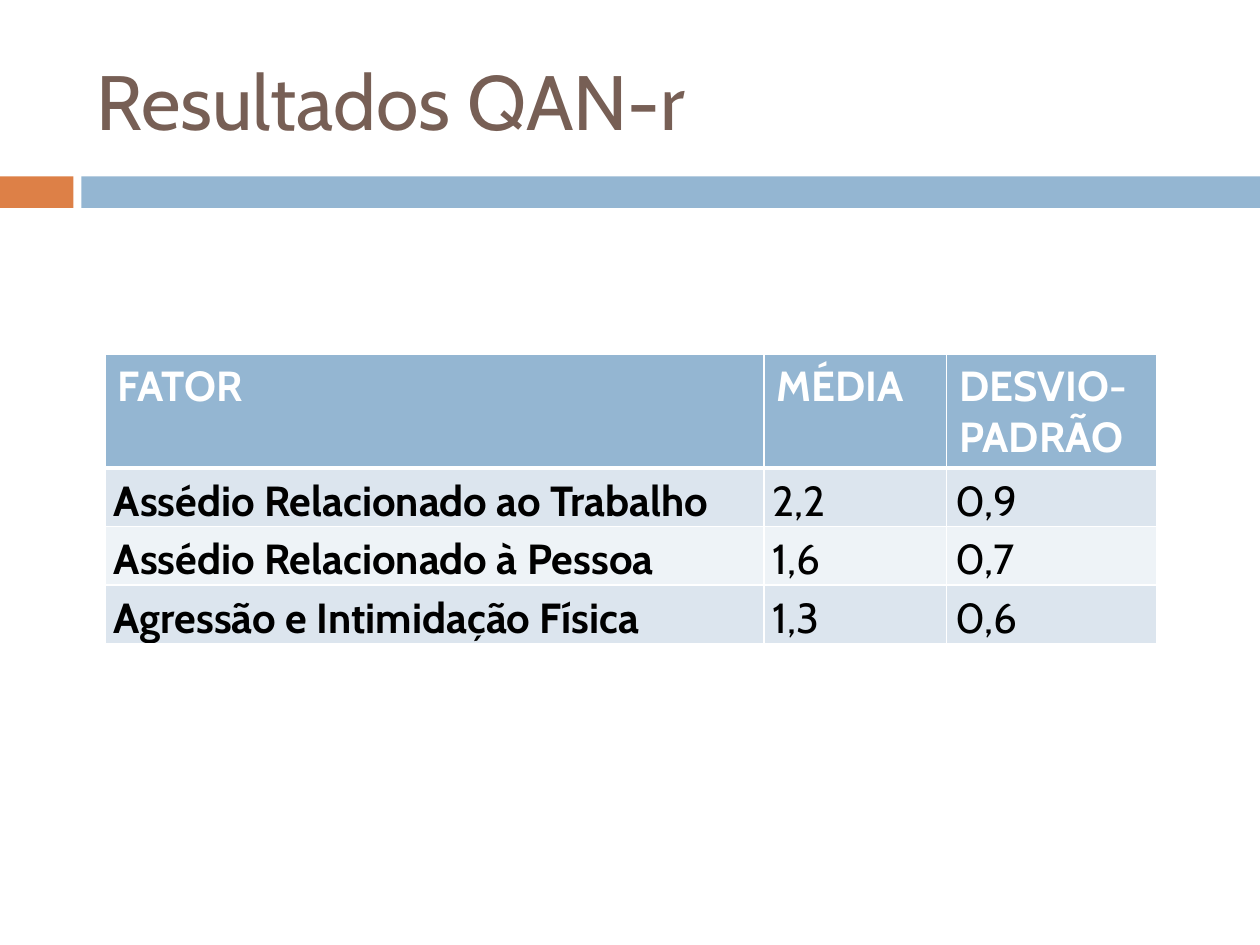
from lxml import etree
from pptx import Presentation
from pptx.dml.color import RGBColor
from pptx.enum.shapes import MSO_SHAPE
from pptx.enum.text import MSO_ANCHOR, PP_ALIGN
from pptx.oxml.ns import qn
from pptx.util import Pt

RECTANGLE = MSO_SHAPE.RECTANGLE
TOP, MIDDLE = MSO_ANCHOR.TOP, MSO_ANCHOR.MIDDLE
JUSTIFY = PP_ALIGN.JUSTIFY

FONT = "Cabin"
BLACK = RGBColor(0x00, 0x00, 0x00)
WHITE = RGBColor(0xFF, 0xFF, 0xFF)
BROWN = RGBColor(0x77, 0x5F, 0x55)
ORANGE = RGBColor(0xDD, 0x80, 0x47)
BLUE = RGBColor(0x94, 0xB6, 0xD2)
BAND_DARK = RGBColor(0xDC, 0xE5, 0xEE)
BAND_LIGHT = RGBColor(0xEE, 0xF3, 0xF7)

HEADERS = ["FATOR", "MÉDIA", "DESVIO-PADRÃO"]
RESULTS = [
    ["Assédio Relacionado ao Trabalho", "2,2", "0,9"],
    ["Assédio Relacionado à Pessoa", "1,6", "0,7"],
    ["Agressão e Intimidação Física", "1,3", "0,6"],
]
COLUMN_WIDTHS = [376.5, 104.5, 120]
HEADER_HEIGHT, RESULT_HEIGHT = 65, 33.4


def set_font(para, size, color, bold=False):
    font = para.font
    font.name, font.size, font.bold = FONT, Pt(size), bold
    font.color.rgb = color


def add_bar(slide, left, width, color):
    bar = slide.shapes.add_shape(RECTANGLE, Pt(left), Pt(100.8), Pt(width), Pt(18))
    bar.shadow.inherit = False
    bar.fill.solid()
    bar.fill.fore_color.rgb = color
    bar.line.fill.background()


def add_title(slide, text):
    box = slide.shapes.add_textbox(Pt(48), Pt(18), Pt(642), Pt(78))
    frame = box.text_frame
    frame.word_wrap = True
    frame.vertical_anchor = MIDDLE
    para = frame.paragraphs[0]
    para.text = text
    set_font(para, 44, BROWN)


def set_borders(cell, top, bottom):
    """Draw white cell borders; must run before the fill is set."""
    properties = cell._tc.get_or_add_tcPr()
    for side, width in (("L", 1), ("R", 1), ("T", top), ("B", bottom)):
        line = etree.SubElement(properties, qn(f"a:ln{side}"), w=str(Pt(width)))
        fill = etree.SubElement(line, qn("a:solidFill"))
        etree.SubElement(fill, qn("a:srgbClr"), val=str(WHITE))


def fill_cell(cell, text, color, top=1, bottom=1):
    set_borders(cell, top, bottom)
    cell.fill.solid()
    cell.fill.fore_color.rgb = color
    para = cell.text_frame.paragraphs[0]
    para.text = text
    return para


def style_result(cell, para, column):
    cell.margin_left = cell.margin_right = Pt(5)
    cell.margin_top = cell.margin_bottom = 0
    cell.vertical_anchor = MIDDLE if column == 2 else TOP
    para.alignment = JUSTIFY
    para.line_spacing = 1.15
    set_font(para, 24, BLACK, bold=column == 0)


def add_results_table(slide):
    height = HEADER_HEIGHT + RESULT_HEIGHT * len(RESULTS)
    table = slide.shapes.add_table(
        len(RESULTS) + 1, len(HEADERS), Pt(60), Pt(202.5),
        Pt(sum(COLUMN_WIDTHS)), Pt(height)).table
    for column, width in zip(table.columns, COLUMN_WIDTHS):
        column.width = Pt(width)
    table.rows[0].height = Pt(HEADER_HEIGHT)
    for column, text in enumerate(HEADERS):
        para = fill_cell(table.cell(0, column), text, BLUE, bottom=3)
        set_font(para, 24, WHITE, bold=True)
    for row, values in enumerate(RESULTS, start=1):
        table.rows[row].height = Pt(RESULT_HEIGHT)
        color = BAND_DARK if row % 2 else BAND_LIGHT
        for column, text in enumerate(values):
            cell = table.cell(row, column)
            para = fill_cell(cell, text, color, top=3 if row == 1 else 1)
            style_result(cell, para, column)


def main():
    deck = Presentation()
    deck.slide_width, deck.slide_height = Pt(720), Pt(540)
    slide = deck.slides.add_slide(deck.slide_layouts[6])
    add_bar(slide, 0, 42, ORANGE)
    add_bar(slide, 46.5, 673.5, BLUE)
    add_title(slide, "Resultados QAN-r")
    add_results_table(slide)
    deck.save("out.pptx")


if __name__ == "__main__":
    main()
